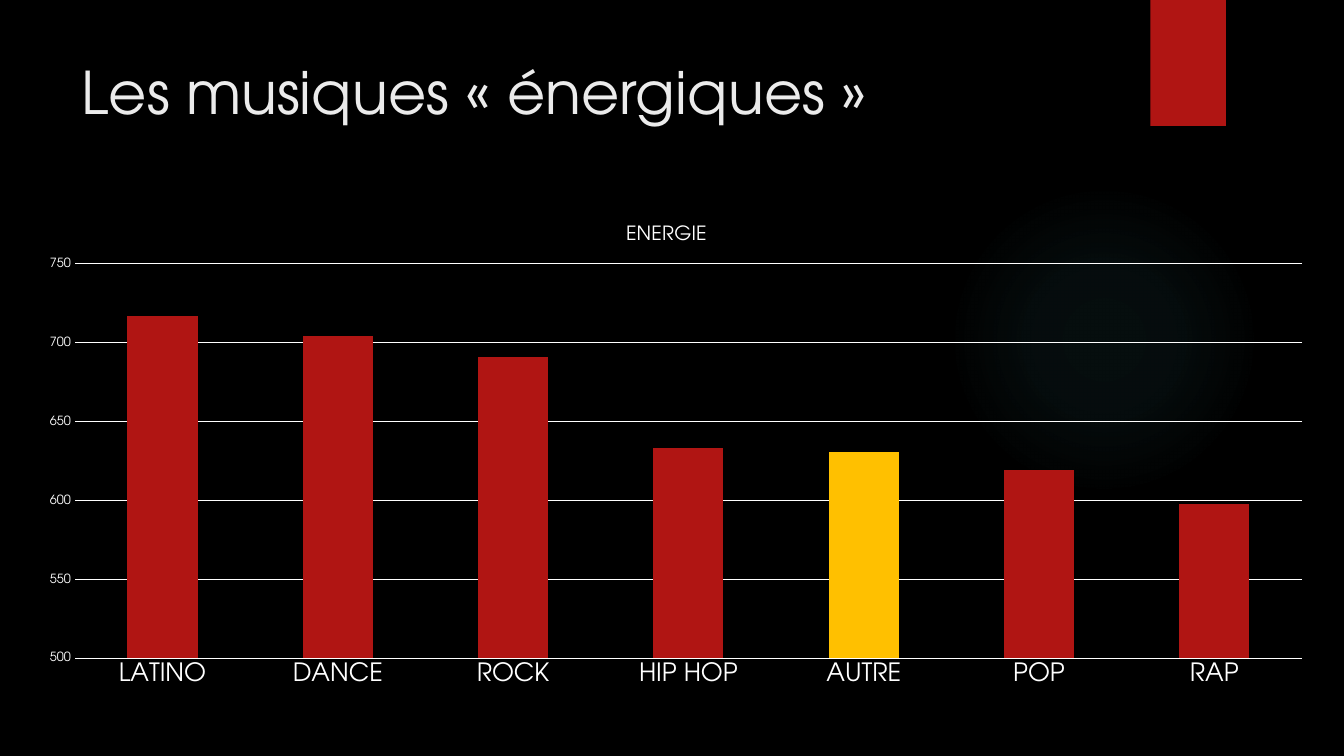
from lxml import etree
from pptx import Presentation
from pptx import util as u
from pptx.chart import data
from pptx.dml import color
from pptx.enum import chart as ch, shapes, text
from pptx.oxml import ns, parse_xml

RED, GOLD, WHITE, TEAL = "B01513", "FFC000", "FFFFFF", "50B9C1"


def rgb(code):
    return color.RGBColor.from_string(code)


def box(*sides):
    return [u.Inches(side) for side in sides]


class Deck:
    def __init__(self, face):
        self.face = face
        self.prs = Presentation()
        self.prs.slide_width, self.prs.slide_height = box(13.33, 7.5)
        self.slide = self.prs.slides.add_slide(self.prs.slide_layouts[5])

    def back(self, code):
        fill = self.slide.background.fill
        fill.solid()
        fill.fore_color.rgb = rgb(code)

    def style(self, font, size, code):
        font.name, font.size, font.bold = self.face, u.Pt(size), False
        font.color.rgb = rgb(code)

    def shape(self, kind, code, *sides):
        item = self.slide.shapes.add_shape(kind, *box(*sides))
        item.shadow.inherit = False
        item.fill.solid()
        item.fill.fore_color.rgb = rgb(code)
        item.line.fill.background()
        return item

    def glow(self, code, stops, *sides):
        """Add a circle whose colour fades outwards; stops are (place, opacity) in percent."""
        item = self.shape(shapes.MSO_SHAPE.OVAL, code, *sides)
        marks = "".join(
            f'<a:gs pos="{place * 1000}"><a:srgbClr val="{code}">'
            f'<a:alpha val="{alpha * 1000}"/></a:srgbClr></a:gs>'
            for place, alpha in stops)
        fade = parse_xml(
            f'<a:gradFill {ns.nsdecls("a")}><a:gsLst>{marks}</a:gsLst><a:path path="circle">'
            '<a:fillToRect l="50000" t="50000" r="50000" b="50000"/></a:path></a:gradFill>')
        props = item._element.spPr
        props.replace(props.find(ns.qn("a:solidFill")), fade)

    def title(self, words, size, code, *sides):
        item = self.slide.shapes.title
        item.left, item.top, item.width, item.height = box(*sides)
        frame = item.text_frame
        frame.text = words
        frame.word_wrap = True
        frame.vertical_anchor = text.MSO_ANCHOR.TOP
        line = frame.paragraphs[0]
        line.alignment = text.PP_ALIGN.LEFT
        self.style(line.runs[0].font, size, code)

    def chart(self, name, values, accent, plot, *sides):
        """Add a column chart; accent names the category set apart in gold."""
        table = data.CategoryChartData()
        table.categories = list(values)
        table.add_series(name, list(values.values()))
        graph = self.slide.shapes.add_chart(
            ch.XL_CHART_TYPE.COLUMN_STACKED, *box(*sides), table).chart
        self.style(graph.font, 10, WHITE)
        graph.has_legend = False
        graph.has_title = True
        head = graph.chart_title
        head.include_in_layout = False
        head.text_frame.text = name
        self.style(head.text_frame.paragraphs[0].runs[0].font, 14, WHITE)

        for axis, size in ((graph.category_axis, 18), (graph.value_axis, 9)):
            axis.major_tick_mark = axis.minor_tick_mark = ch.XL_TICK_MARK.NONE
            axis.format.line.fill.background()
            self.style(axis.tick_labels.font, size, WHITE)
        scale = graph.value_axis
        scale.minimum_scale, scale.maximum_scale, scale.major_unit = 500, 750, 50
        scale.tick_labels.number_format = "0"
        scale.tick_labels.number_format_is_linked = False
        grid = scale.major_gridlines.format.line
        grid.width = u.Pt(0.75)
        grid.color.rgb = rgb(WHITE)

        bars = graph.plots[0]
        bars.gap_width, bars.overlap, bars.vary_by_categories = 150, 100, False
        series = bars.series[0]
        point = series.points[list(values).index(accent)]
        for part, code in ((series, RED), (point, GOLD)):
            part.format.fill.solid()
            part.format.fill.fore_color.rgb = rgb(code)
        self.place(graph, plot)

    def place(self, graph, plot):
        """Fix the inner plot area as fractions of the chart."""
        area = graph._chartSpace.chart.plotArea
        for old in area.findall(ns.qn("c:layout")):
            area.remove(old)
        layout = etree.Element(ns.qn("c:layout"))
        manual = etree.SubElement(layout, ns.qn("c:manualLayout"))
        pairs = [("layoutTarget", "inner"), ("xMode", "edge"), ("yMode", "edge")]
        for tag, value in pairs + list(zip("xywh", plot)):
            etree.SubElement(manual, ns.qn("c:" + tag)).set("val", str(value))
        area.insert(0, layout)


def main():
    deck = Deck("TeX Gyre Adventor")
    deck.back("000000")
    deck.glow(TEAL, [(0, 7), (36, 6), (69, 0), (100, 0)], 9.41, 1.83, 3.08, 3.08)
    deck.shape(shapes.MSO_SHAPE.RECTANGLE, RED, 11.41, 0, 0.75, 1.25)
    deck.title("Les musiques « énergiques »", 42, "EBEBEB", 0.71, 0.5, 10.29, 1.53)
    energy = {"LATINO": 717, "DANCE": 704, "ROCK": 691, "HIP HOP": 633,
              "AUTRE": 631, "POP": 619, "RAP": 598}
    deck.chart("ENERGIE", energy, "AUTRE", (0.043, 0.118, 0.948, 0.786),
               0.19, 2.03, 12.84, 4.98)
    deck.prs.save("out.pptx")


if __name__ == "__main__":
    main()
